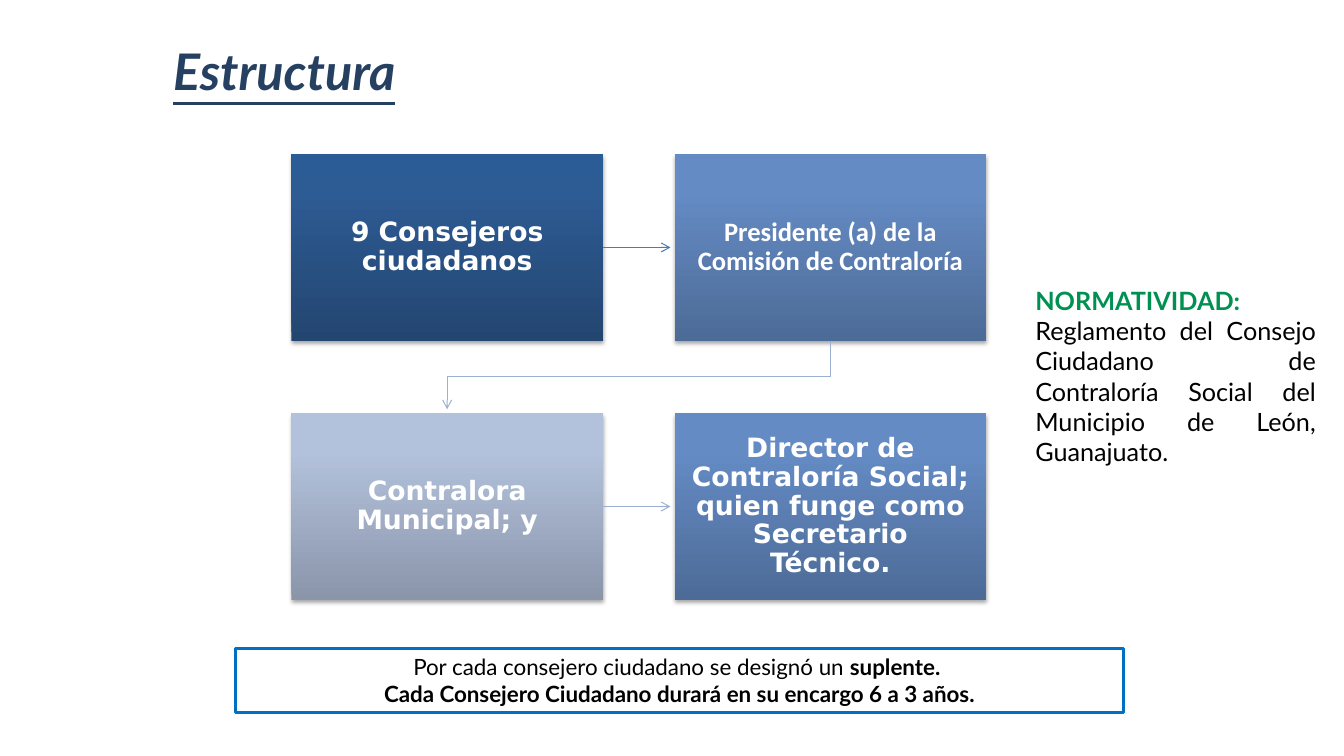
from lxml import etree
from pptx import Presentation
from pptx.dml.color import RGBColor
from pptx.enum import shapes, text
from pptx.oxml import parse_xml
from pptx.oxml.ns import nsdecls, qn
from pptx.util import Inches, Pt


def color(hex_value):
    return RGBColor.from_string(hex_value)


def add_run(paragraph, words, size, hex_value, bold=False, font="Lato"):
    run = paragraph.add_run()
    run.text = words
    run.font.name, run.font.size, run.font.bold = font, Pt(size), bold
    run.font.color.rgb = color(hex_value)
    return run


deck = Presentation()
deck.slide_width, deck.slide_height = Inches(13.33), Inches(7.5)
slide = deck.slides.add_slide(deck.slide_layouts[5])

# Title
title = slide.shapes.title
title.left, title.top = Inches(1.08), Inches(0.35)
title.width, title.height = Inches(3.48), Inches(0.71)
title.text_frame.vertical_anchor = text.MSO_ANCHOR.TOP
title.text_frame.auto_size = text.MSO_AUTO_SIZE.NONE
heading = title.text_frame.paragraphs[0]
heading.alignment = text.PP_ALIGN.CENTER
heading_run = add_run(heading, "Estructura", 36, "254061", True)
heading_run.font.italic = heading_run.font.underline = True

# Four roles in a two by two grid, each with gradient stops from bottom to top
LEFT, TOP, WIDTH, HEIGHT = 2.89, 1.53, 3.09, 1.85
COLUMN_STEP, ROW_STEP = 3.8, 2.57
BLUE = ("4D6B97", "648BC4", "638BC7")
roles = [
    ("9 Consejeros ciudadanos", "DejaVu Sans", ("234671", "2D5B93", "2B5C96")),
    ("Presidente (a) de la Comisión de Contraloría", "Calibri", BLUE),
    ("Contralora Municipal; y", "DejaVu Sans", ("8A95AA", "B3C2DC", "B4C3DE")),
    ("Director de Contraloría Social; quien funge como Secretario Técnico.", "DejaVu Sans", BLUE),
]
role_boxes = []
for index, (role, font, stops) in enumerate(roles):
    row, column = divmod(index, 2)
    box = slide.shapes.add_shape(
        shapes.MSO_SHAPE.RECTANGLE,
        Inches(LEFT + column * COLUMN_STEP), Inches(TOP + row * ROW_STEP),
        Inches(WIDTH), Inches(HEIGHT))
    box.line.fill.background()
    stop_list = "".join(
        f'<a:gs pos="{position}000"><a:srgbClr val="{stop}"/></a:gs>'
        for position, stop in zip((0, 80, 100), stops))
    box._element.spPr.find(qn("a:prstGeom")).addnext(parse_xml(
        f'<a:gradFill rotWithShape="1" {nsdecls("a")}><a:gsLst>{stop_list}</a:gsLst>'
        '<a:lin ang="16200000" scaled="0"/></a:gradFill>'))
    box.shadow.inherit = False
    box._element.spPr.find(qn("a:effectLst")).append(parse_xml(
        f'<a:outerShdw {nsdecls("a")} blurRad="39370" dist="22860" dir="5400000" rotWithShape="0">'
        '<a:srgbClr val="000000"><a:alpha val="35000"/></a:srgbClr></a:outerShdw>'))
    frame = box.text_frame
    frame.word_wrap = True
    frame.vertical_anchor = text.MSO_ANCHOR.MIDDLE
    frame.margin_left = frame.margin_right = Inches(0.15)
    frame.margin_top = frame.margin_bottom = Inches(0.15)
    label = frame.paragraphs[0]
    label.alignment = text.PP_ALIGN.CENTER
    label.line_spacing = 0.9
    add_run(label, role, 19, "FFFFFF", True, font)
    role_boxes.append(box)

# Arrows: one across each row, and an elbow from the first row to the second
arrows = []
for row, arrow_color in enumerate(("4B7BB5", "9CB1D1")):
    middle = Inches(TOP + row * ROW_STEP + HEIGHT / 2)
    across = slide.shapes.add_connector(
        shapes.MSO_CONNECTOR.STRAIGHT, Inches(LEFT + WIDTH), middle, Inches(6.65), middle)
    across.begin_connect(role_boxes[row * 2], 3)
    etree.SubElement(across._element.spPr, qn("a:effectLst"))
    arrows.append((across, arrow_color))

target_x = LEFT + WIDTH / 2
source_x = target_x + COLUMN_STEP
outline = slide.shapes.build_freeform(Inches(source_x), Inches(TOP + HEIGHT))
outline.add_line_segments(
    [(Inches(x), Inches(y)) for x, y in ((source_x, 3.74), (target_x, 3.74), (target_x, 4.06))],
    close=False)
elbow = outline.convert_to_shape()
elbow.fill.background()
elbow.shadow.inherit = False
arrows.append((elbow, "9CB1D1"))

for arrow, arrow_color in arrows:
    arrow.line.color.rgb = color(arrow_color)
    arrow.line.width = Pt(0.75)
    etree.SubElement(arrow.line._get_or_add_ln(), qn("a:tailEnd"), type="arrow")

# Note on substitutes and terms
note = slide.shapes.add_shape(
    shapes.MSO_SHAPE.RECTANGLE, Inches(2.34), Inches(6.43), Inches(8.8), Inches(0.64))
note.shadow.inherit = False
note.fill.solid()
note.fill.fore_color.rgb = color("FFFFFF")
note.line.color.rgb = color("0070C0")
note.line.width = Pt(2)
note.text_frame.word_wrap = True
substitutes = note.text_frame.paragraphs[0]
term = note.text_frame.add_paragraph()
substitutes.alignment = term.alignment = text.PP_ALIGN.CENTER
add_run(substitutes, "Por cada consejero ciudadano se designó un ", 16, "000000")
add_run(substitutes, "suplente. ", 16, "000000", True)
add_run(term, "Cada Consejero Ciudadano durará en su encargo 6 a 3 años.", 16, "000000", True)

# Regulations
rules = slide.shapes.add_textbox(Inches(10.17), Inches(2.78), Inches(2.98), Inches(1.92))
rules.text_frame.word_wrap = True
regulation = rules.text_frame.paragraphs[0]
regulation.alignment = text.PP_ALIGN.JUSTIFY
add_run(regulation, "NORMATIVIDAD: ", 18, "009051", True)
add_run(regulation, "Reglamento del Consejo Ciudadano de Contraloría Social del "
        "Municipio de León, Guanajuato.", 18, "000000")

deck.save("out.pptx")
